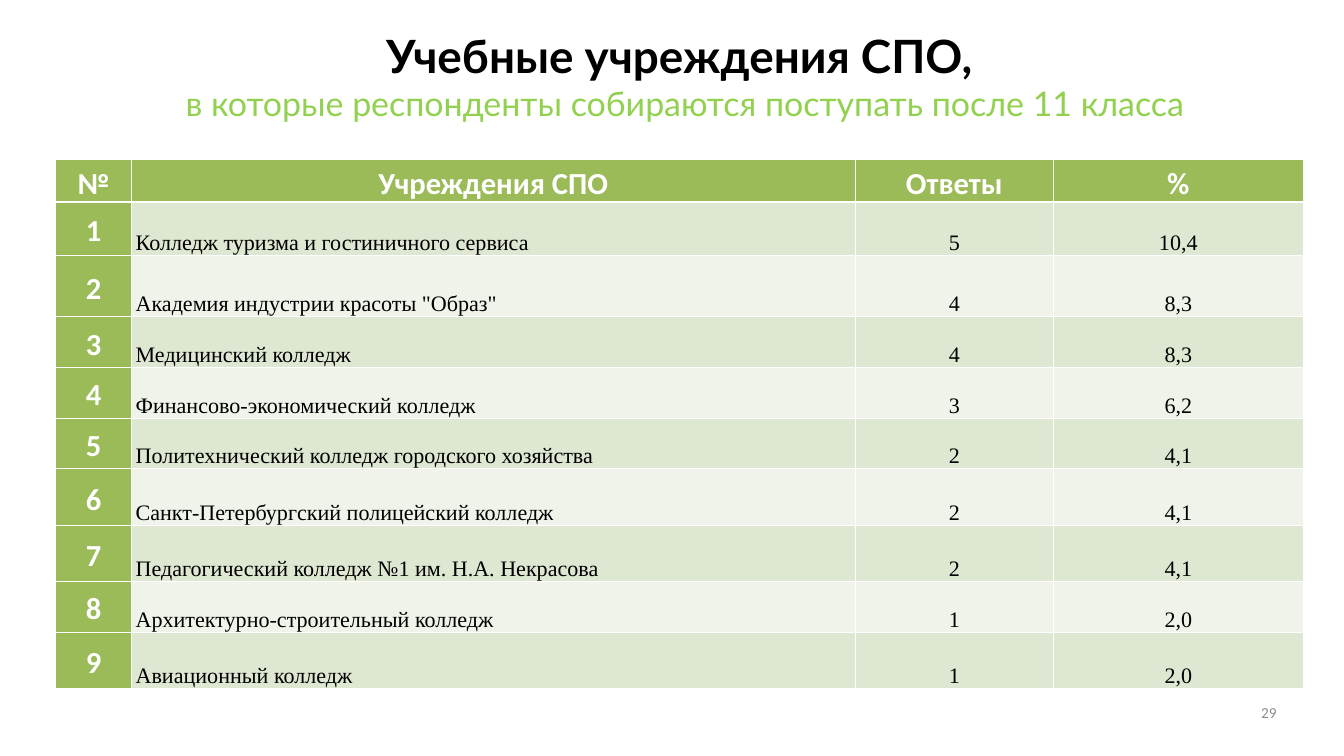
from lxml import etree
from pptx import Presentation
from pptx.dml.color import RGBColor
from pptx.enum.text import MSO_ANCHOR, PP_ALIGN
from pptx.oxml.ns import qn
from pptx.util import Inches, Pt

TOP, MIDDLE, BOTTOM = MSO_ANCHOR.TOP, MSO_ANCHOR.MIDDLE, MSO_ANCHOR.BOTTOM
CENTER, RIGHT, JUSTIFY = PP_ALIGN.CENTER, PP_ALIGN.RIGHT, PP_ALIGN.JUSTIFY

WHITE, BLACK, GREEN = "FFFFFF", "000000", "9BBB59"
BANDS = ["DEE7D1", "EFF3EA"]
HEAD = ("Calibri", 36, WHITE, True)
BODY = ("Times New Roman", 26, BLACK, False)

COLS = [1.24, 11.84, 3.25, 4.08]
ROWS = [0.61, 0.88, 1, 0.83, 0.83, 0.83, 0.92, 0.92, 0.83, 0.92]
TITLES = ["№", "Учреждения СПО", "Ответы", "%"]
SCHOOLS = [
    ("Колледж туризма и гостиничного сервиса", "5", "10,4"),
    ('Академия индустрии красоты "Образ"', "4", "8,3"),
    ("Медицинский колледж", "4", "8,3"),
    ("Финансово-экономический колледж", "3", "6,2"),
    ("Политехнический колледж городского хозяйства", "2", "4,1"),
    ("Санкт-Петербургский полицейский колледж", "2", "4,1"),
    ("Педагогический колледж №1 им. Н.А. Некрасова", "2", "4,1"),
    ("Архитектурно-строительный колледж", "1", "2,0"),
    ("Авиационный колледж", "1", "2,0"),
]


def color(code):
    return RGBColor.from_string(code)


class Page:
    def __init__(self, slide):
        self.slide = slide

    def run(self, para, text, style):
        run = para.add_run()
        run.text = text
        font = run.font
        font.name, size, code, font.bold = style
        font.size = Pt(size)
        font.color.rgb = color(code)

    def text(self, box, lines, align):
        frame = self.slide.shapes.add_textbox(*map(Inches, box)).text_frame
        frame.word_wrap = True
        frame.vertical_anchor = TOP
        frame.margin_left = frame.margin_right = 0
        frame.margin_top = frame.margin_bottom = 0
        para = frame.paragraphs[0]
        para.alignment = align
        for i, (text, style) in enumerate(lines):
            if i:
                para.add_line_break()
            self.run(para, text, style)

    def edges(self, cell, top, bottom):
        props = cell._tc.get_or_add_tcPr()
        sides = [("lnL", 1), ("lnR", 1), ("lnT", top), ("lnB", bottom)]
        for i, (side, width) in enumerate(sides):
            line = etree.Element(qn("a:" + side), w=str(Pt(width)))
            fill = etree.SubElement(line, qn("a:solidFill"))
            etree.SubElement(fill, qn("a:srgbClr"), val=WHITE)
            props.insert(i, line)

    def cell(self, cell, text, style, fill, align, anchor, pad):
        cell.margin_left = cell.margin_right = Inches(pad)
        cell.margin_top = cell.margin_bottom = 0
        cell.vertical_anchor = anchor
        cell.fill.solid()
        cell.fill.fore_color.rgb = color(fill)
        para = cell.text_frame.paragraphs[0]
        para.alignment = align
        para.line_spacing = 1.15
        self.run(para, text, style)

    def table(self, left, top, data):
        box = map(Inches, (left, top, sum(COLS), sum(ROWS)))
        table = self.slide.shapes.add_table(len(ROWS), len(COLS), *box).table
        table.horz_banding = False
        for col, width in zip(table.columns, COLS):
            col.width = Inches(width)
        for row, height in zip(table.rows, ROWS):
            row.height = Inches(height)
        for r, line in enumerate(data):
            for c, text in enumerate(line):
                cell = table.cell(r, c)
                if r == 0 or c == 0:
                    anchor = MIDDLE if r else TOP
                    self.cell(cell, text, HEAD, GREEN, CENTER, anchor, 0.03)
                else:
                    align = JUSTIFY if c == 1 else CENTER
                    band = BANDS[(r - 1) % 2]
                    self.cell(cell, text, BODY, band, align, BOTTOM, 0.07)
                self.edges(cell, 3 if r == 1 else 1, 3 if r == 0 else 1)


def main():
    deck = Presentation()
    deck.slide_width, deck.slide_height = Inches(21.99), Inches(12.37)
    page = Page(deck.slides.add_slide(deck.slide_layouts[6]))
    page.text((1.41, 0.45, 19.59, 2.1), [
        ("Учебные учреждения СПО, ", ("Lato", 54, BLACK, True)),
        ("в которые респонденты собираются поступать после 11 класса",
         ("Lato", 40, "92D050", False)),
    ], CENTER)
    data = [(str(i), *school) for i, school in enumerate(SCHOOLS, 1)]
    page.table(0.91, 2.61, [TITLES, *data])
    page.text((15.83, 11.5, 5.06, 0.62),
              [("29", ("Calibri", 18, "8C8C8C", False))], RIGHT)
    deck.save("out.pptx")


if __name__ == "__main__":
    main()
